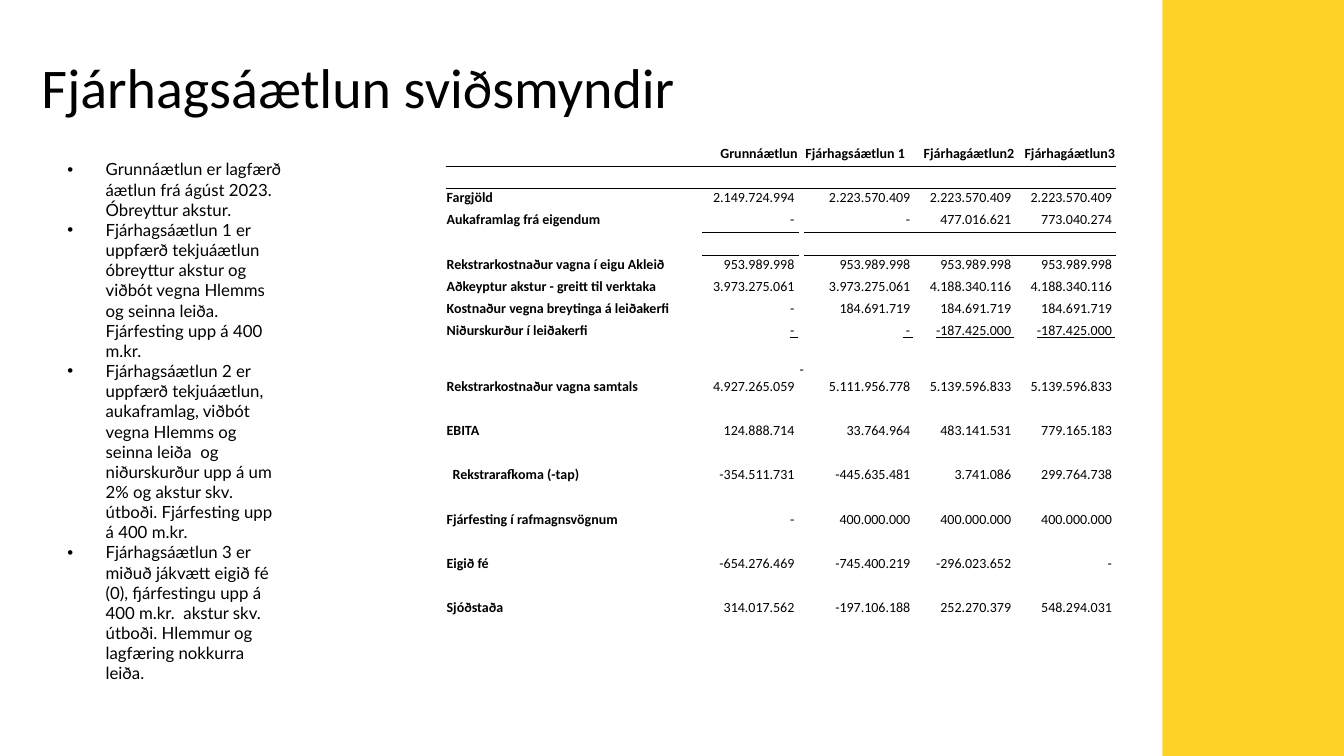
from lxml import etree
from pptx import Presentation
from pptx.dml.color import RGBColor
from pptx.enum import shapes, text
from pptx.oxml import ns
from pptx.util import Inches, Pt

COLORS = {"ink": "000000", "band": "FFD228"}
PLAIN = "{2D5ABB26-0587-4C30-8999-92F81FD0307C}"
TITLE = "Fjárhagsáætlun sviðsmyndir"
NOTES = [
    "Grunnáætlun er lagfærð áætlun frá ágúst 2023. Óbreyttur akstur.",
    "Fjárhagsáætlun 1 er uppfærð tekjuáætlun óbreyttur akstur og viðbót vegna "
    "Hlemms og seinna leiða. Fjárfesting upp á 400 m.kr.",
    "Fjárhagsáætlun 2 er uppfærð tekjuáætlun, aukaframlag, viðbót vegna Hlemms og "
    "seinna leiða  og niðurskurður upp á um 2% og akstur skv. útboði. "
    "Fjárfesting upp á 400 m.kr.",
    "Fjárhagsáætlun 3 er miðuð jákvætt eigið fé (0), fjárfestingu upp á 400 m.kr.  "
    "akstur skv. útboði. Hlemmur og lagfæring nokkurra leiða.",
]
WIDTHS = [2.54, 0.96, 0.05, 1.09, 1, 1]
ROWS, HIGH, TALL, TOTAL = 21, 0.22, 0.39, 10
HEAD = ["Grunnáætlun", "Fjárhagsáætlun 1", "Fjárhagáætlun2", "Fjárhagáætlun3"]
FIGURES = {
    3: ("Fargjöld", "2.149.724.994", "2.223.570.409", "2.223.570.409", "2.223.570.409"),
    4: ("Aukaframlag frá eigendum", "-", "-", "477.016.621", "773.040.274"),
    6: ("Rekstrarkostnaður vagna í eigu Akleið",
        "953.989.998", "953.989.998", "953.989.998", "953.989.998"),
    7: ("Aðkeyptur akstur - greitt til verktaka",
        "3.973.275.061", "3.973.275.061", "4.188.340.116", "4.188.340.116"),
    8: ("Kostnaður vegna breytinga á leiðakerfi",
        "-", "184.691.719", "184.691.719", "184.691.719"),
    9: ("Niðurskurður í leiðakerfi", "-", "-", "-187.425.000", "-187.425.000"),
    10: ("Rekstrarkostnaður vagna samtals",
         "4.927.265.059", "5.111.956.778", "5.139.596.833", "5.139.596.833"),
    12: ("EBITA", "124.888.714", "33.764.964", "483.141.531", "779.165.183"),
    14: ("Rekstrarafkoma (-tap)",
         "-354.511.731", "-445.635.481", "3.741.086", "299.764.738"),
    16: ("Fjárfesting í rafmagnsvögnum", "-", "400.000.000", "400.000.000", "400.000.000"),
    18: ("Eigið fé", "-654.276.469", "-745.400.219", "-296.023.652", "-"),
    20: ("Sjóðstaða", "314.017.562", "-197.106.188", "252.270.379", "548.294.031"),
}
CUT, RESULT = 9, 14
COLS = [1, 3, 4, 5]
RULES = {1: range(6), 4: COLS}
ALIGN = text.PP_ALIGN


def style(item, **form):
    """Set each named attribute on the item."""
    for key, val in form.items():
        setattr(item, key, val)


def write(para, words, size, face="Calibri", **form):
    """Add one formatted run to a paragraph."""
    run = para.add_run()
    run.text = words
    style(run.font, size=Pt(size), name=face, **form)
    run.font.color.rgb = RGBColor.from_string(COLORS["ink"])


def place(item, box):
    """Move an item to a box given in inches."""
    style(item, **dict(zip(("left", "top", "width", "height"), map(Inches, box))))


def add_band(slide, box):
    """Draw the colour band."""
    band = slide.shapes.add_shape(shapes.MSO_SHAPE.RECTANGLE, *map(Inches, box))
    band.shadow.inherit = False
    band.fill.solid()
    band.fill.fore_color.rgb = RGBColor.from_string(COLORS["band"])
    band.line.fill.background()


def add_title(slide, box):
    """Fill the title placeholder."""
    title = slide.shapes.title
    place(title, box)
    style(title.text_frame, vertical_anchor=text.MSO_ANCHOR.BOTTOM,
          auto_size=text.MSO_AUTO_SIZE.NONE, word_wrap=True)
    para = title.text_frame.paragraphs[0]
    style(para, alignment=ALIGN.LEFT, line_spacing=0.9)
    write(para, TITLE, 40)


def add_notes(slide, box):
    """Write the bulleted list of scenarios."""
    frame = slide.shapes.add_textbox(*map(Inches, box)).text_frame
    frame.word_wrap = True
    for num, words in enumerate(NOTES):
        para = frame.add_paragraph() if num else frame.paragraphs[0]
        props = para._p.get_or_add_pPr()
        style(para, line_spacing=1.0, space_before=Pt(0))
        props.set("marL", str(Inches(0.38)))
        props.set("indent", str(-Inches(0.38)))
        etree.SubElement(props, ns.qn("a:buFont")).set("typeface", "Arial")
        etree.SubElement(props, ns.qn("a:buChar")).set("char", "•")
        write(para, words, 12, "Lato")


def add_rule(cell, side):
    """Draw a thin line on one side of a cell."""
    line = etree.Element(ns.qn("a:ln" + side), w=str(Pt(0.5)))
    fill = etree.SubElement(line, ns.qn("a:solidFill"))
    etree.SubElement(fill, ns.qn("a:srgbClr")).set("val", COLORS["ink"])
    cell._tc.get_or_add_tcPr().insert(0, line)


def fill_cell(cell, words, align=ALIGN.RIGHT, **form):
    """Write aligned text in a cell."""
    para = cell.text_frame.paragraphs[0]
    para.alignment = align
    write(para, words, 10, **form)


def pad(value, col):
    """Space a figure in the accounting manner."""
    flush = col == 1 or (value[0] == "-" and len(value) > 1)
    return f"{value} " if flush else f" {value} "


def add_grid(slide, box):
    """Build the table of budget figures."""
    table = slide.shapes.add_table(ROWS, len(WIDTHS), *map(Inches, box)).table
    style(table, first_row=False, horz_banding=False)
    table._tbl.tblPr.find(ns.qn("a:tableStyleId")).text = PLAIN
    for col, wide in zip(table.columns, WIDTHS):
        col.width = Inches(wide)
    for num, row in enumerate(table.rows):
        row.height = Inches(TALL if num == TOTAL else HIGH)
        for cell in row.cells:
            style(cell, margin_left=Inches(0.01), margin_right=Inches(0.01),
                  margin_top=Inches(0.01), margin_bottom=Inches(0.04),
                  vertical_anchor=text.MSO_ANCHOR.BOTTOM)
            cell.fill.background()
    for col, words in zip(COLS, HEAD):
        fill_cell(table.cell(1, col), words, ALIGN.LEFT if col == 3 else ALIGN.RIGHT,
                  bold=True)
    for row, (label, *values) in FIGURES.items():
        fill_cell(table.cell(row, 0), label, ALIGN.LEFT, bold=True)
        for col, value in zip(COLS, values):
            fill_cell(table.cell(row, col), pad(value, col), bold=False,
                      underline=row == CUT)
    fill_cell(table.cell(TOTAL, 2), pad("-", 2), bold=False)
    table.cell(RESULT, 0).margin_left = Inches(0.07)
    for row, cols in RULES.items():
        for col in cols:
            add_rule(table.cell(row, col), "B")
            add_rule(table.cell(row + 1, col), "T")
    for row in (0, 2):
        table.cell(row, 2).merge(table.cell(row, 3))
    for cell in table.iter_cells():
        if not cell.text:
            para = cell.text_frame.paragraphs[0]._p
            etree.SubElement(para, ns.qn("a:endParaRPr")).set("sz", "800")


def main():
    """Build and save the slide."""
    deck = Presentation()
    style(deck, slide_width=Inches(13.33), slide_height=Inches(7.5))
    slide = deck.slides.add_slide(deck.slide_layouts.get_by_name("Title Only"))
    add_band(slide, (11.53, 0, 1.8, 7.5))
    add_title(slide, (0.31, 0.34, 10, 0.91))
    add_notes(slide, (0.57, 1.53, 2.33, 4.26))
    add_grid(slide, (4.42, 1.21, sum(WIDTHS), HIGH * (ROWS - 1) + TALL))
    deck.save("out.pptx")


if __name__ == "__main__":
    main()
